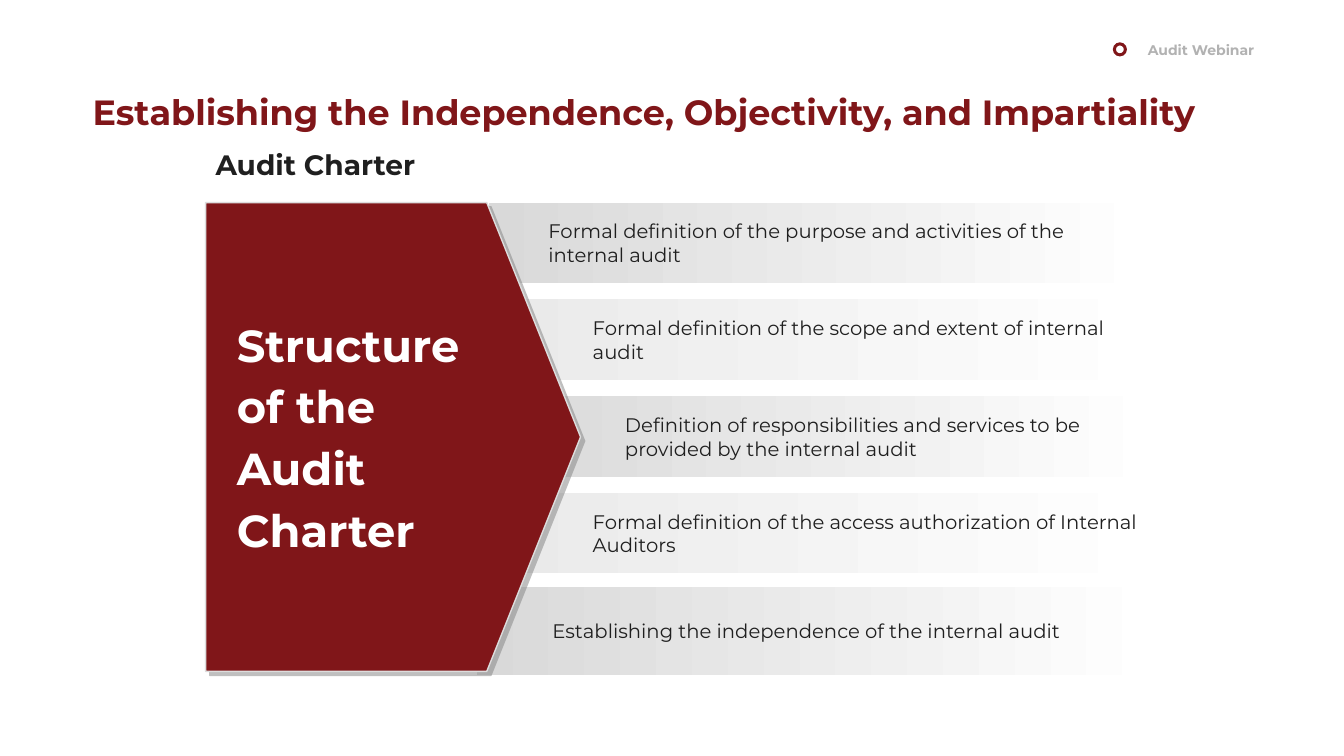
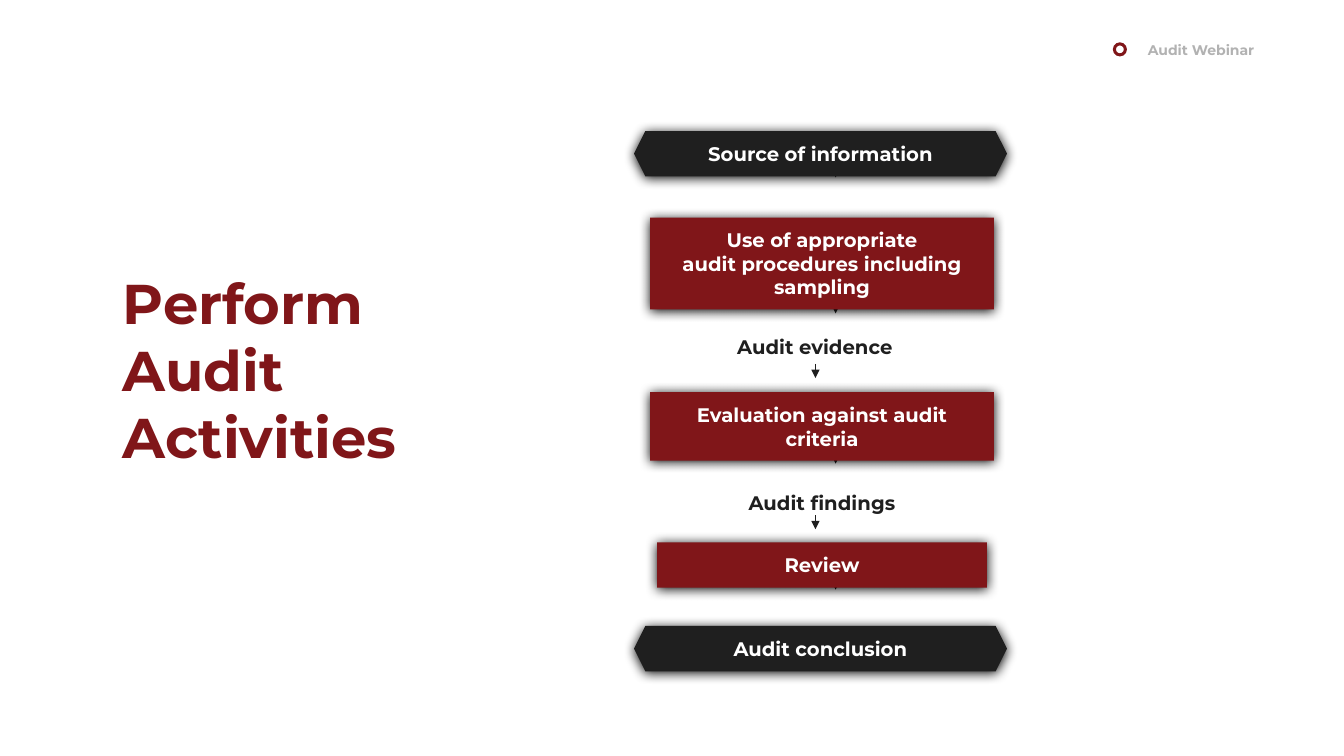
from lxml.etree import SubElement
from pptx import Presentation
from pptx.dml.color import RGBColor
from pptx.enum.shapes import MSO_CONNECTOR as Link, MSO_SHAPE as Form
from pptx.enum.text import MSO_ANCHOR as Anchor, MSO_AUTO_SIZE as Fit, PP_ALIGN as Align
from pptx.oxml.ns import qn
from pptx.util import Inches, Pt

MAROON = RGBColor(0x80, 0x16, 0x19)
INK = RGBColor(0x1F, 0x1F, 0x1F)
WHITE = RGBColor(0xFF, 0xFF, 0xFF)
MUTED = RGBColor(0xB2, 0xB2, 0xB2)
EDGE = RGBColor(0xDD, 0xDD, 0xDD)
SHADE = RGBColor(0x80, 0x80, 0x80)
BLACK = RGBColor(0, 0, 0)
BAR_DARK = RGBColor(0xD9, 0xD9, 0xD9)
BAR_LIGHT = RGBColor(0xEA, 0xEA, 0xEA)

COLUMNS, ROWS = 80, 45
DROP = {"color": SHADE, "alpha": 50, "blur": 0, "distance": 4.2, "angle": 45}
GLOW = {"color": BLACK, "alpha": 100, "blur": 8.5, "distance": 1, "angle": 90}


def apply(target, values):
    for name, value in values.items():
        setattr(target, name, value)


class Deck:
    font = "Montserrat"

    def __init__(self):
        self.deck = Presentation()
        apply(self.deck, {"slide_width": Inches(13.33), "slide_height": Inches(7.5)})
        self.page = None

    def across(self, columns):
        return round(self.deck.slide_width * columns / COLUMNS)

    def down(self, rows):
        return round(self.deck.slide_height * rows / ROWS)

    def place(self, left, top, width, height):
        return self.across(left), self.down(top), self.across(width), self.down(height)

    def start(self):
        self.page = self.deck.slides.add_slide(self.deck.slide_layouts[6])
        self.label((65.64, 2.16, 9.6, 1.62), ["Audit Webinar"], 10, MUTED, align=Align.RIGHT, fit=True)
        self.shape(Form.DONUT, (66.24, 2.52, 0.84, 0.84), MAROON, adjust=0.22)

    def set_text(self, box, lines, size, color, bold=True, align=Align.LEFT,
                 anchor=Anchor.MIDDLE, after=0, inset=None):
        frame = box.text_frame
        apply(frame, {"word_wrap": True, "vertical_anchor": anchor})
        if inset is not None:
            edge = self.across(0.24)
            apply(frame, {"margin_left": self.across(inset), "margin_right": edge,
                          "margin_top": edge, "margin_bottom": edge})
        for number, line in enumerate(lines):
            para = frame.add_paragraph() if number else frame.paragraphs[0]
            apply(para, {"alignment": align, "space_after": Pt(after)})
            span = para.add_run()
            span.text = line
            apply(span.font, {"name": self.font, "size": Pt(size), "bold": bold})
            span.font.color.rgb = color

    def label(self, area, lines, size, color, fit=False, **style):
        box = self.page.shapes.add_textbox(*self.place(*area))
        if fit:
            style["anchor"] = Anchor.TOP
        self.set_text(box, lines, size, color, **style)
        if fit:
            box.text_frame.auto_size = Fit.SHAPE_TO_FIT_TEXT

    def shape(self, form, area, fill, edge=None, shadow=None, adjust=None):
        box = self.page.shapes.add_shape(form, *self.place(*area))
        box.shadow.inherit = False
        box.fill.solid()
        box.fill.fore_color.rgb = fill
        if edge is None:
            box.line.fill.background()
        else:
            box.line.color.rgb = edge
            box.line.width = Pt(1)
        if adjust is not None:
            box.adjustments[0] = adjust
        if shadow:
            self.cast(box, **shadow)
        return box

    def cast(self, box, color, alpha, blur, distance, angle):
        effects = box._element.spPr.find(qn("a:effectLst"))
        outer = SubElement(effects, qn("a:outerShdw"), blurRad=str(Pt(blur)),
                           dist=str(Pt(distance)), dir=str(angle * 60000),
                           algn="ctr", rotWithShape="0")
        tone = SubElement(outer, qn("a:srgbClr"), val=str(color))
        SubElement(tone, qn("a:alpha"), val=str(alpha * 1000))

    def bar(self, area, shade, text, inset):
        box = self.shape(Form.RECTANGLE, area, shade)
        box.fill.gradient()
        box.fill.gradient_angle = 0
        for stop, color in zip(box.fill.gradient_stops, (shade, WHITE)):
            stop.color.rgb = color
        self.set_text(box, [text], 14, INK, bold=False, after=2.5, inset=inset)

    def step(self, form, area, fill, lines):
        box = self.shape(form, area, fill, shadow=GLOW)
        self.set_text(box, lines, 14, WHITE, align=Align.CENTER)

    def arrow(self, column, top, bottom):
        line = self.page.shapes.add_connector(
            Link.STRAIGHT, self.across(column), self.down(top), self.across(column), self.down(bottom))
        line.line.color.rgb = INK
        line.line.width = Pt(0.75)
        look = line._element.spPr
        SubElement(look.find(qn("a:ln")), qn("a:tailEnd"), type="triangle")
        SubElement(look, qn("a:effectLst"))


def charter(deck):
    deck.start()
    bars = [
        (29.1, 39.3, 3.54, "Formal definition of the purpose and activities of the internal audit"),
        (29.64, 39.3, 5.64, "Formal definition of the scope and extent of internal audit"),
        (29.64, 39.3, 7.56, "Definition of responsibilities and services to be provided by the internal audit"),
        (29.64, 39.3, 5.64, "Formal definition of the access authorization of Internal Auditors"),
        (28.38, 40.56, 4.5, "Establishing the independence of the internal audit"),
    ]
    last = len(bars) - 1
    for number, (left, width, inset, text) in enumerate(bars):
        top, height = (34.92, 5.28) if number == last else (12.06 + 5.76 * number, 4.8)
        shade = BAR_LIGHT if number % 2 else BAR_DARK
        deck.bar((left, top, width, height), shade, text, inset)
    plate = deck.shape(Form.PENTAGON, (12.24, 12.06, 22.32, 27.9), MAROON,
                       edge=EDGE, shadow=DROP, adjust=0.25)
    deck.set_text(plate, ["Structure", "of the", "Audit", "Charter"], 32, WHITE, after=5.8, inset=1.86)
    deck.label((12.24, 8.46, 30.9, 2.64), ["Audit Charter"], 20, INK, fit=True)
    deck.label((4.92, 5.1, 67.86, 3.12),
               ["Establishing the Independence, Objectivity, and Impartiality"], 25, MAROON, fit=True)


def activities(deck):
    deck.start()
    for column, top, bottom in [(49.74, 10.44, 10.56), (49.74, 18.48, 18.66), (48.54, 21.66, 22.5),
                                (49.74, 27.42, 27.6), (48.54, 30.66, 31.5), (49.74, 34.92, 35.1)]:
        deck.arrow(column, top, bottom)
    for top, text in [(7.8, "Source of information"), (37.26, "Audit conclusion")]:
        deck.step(Form.HEXAGON, (37.74, top, 22.2, 2.7), INK, [text])
    for left, top, width, height, lines in [
        (38.7, 12.96, 20.46, 5.46, ["Use of appropriate", "audit procedures including sampling"]),
        (38.7, 23.34, 20.46, 4.08, ["Evaluation against audit criteria"]),
        (39.12, 32.28, 19.62, 2.7, ["Review"]),
    ]:
        deck.step(Form.RECTANGLE, (left, top, width, height), MAROON, lines)
    for left, top, text in [(38.7, 20.1, "Audit evidence"), (39.12, 29.4, "Audit findings")]:
        deck.label((left, top, 19.62, 1.08), [text], 14, INK, align=Align.CENTER)
    deck.label((6.72, 15.66, 19.62, 12.72), ["Perform", "Audit", "Activities"], 40, MAROON, fit=True)


def main():
    deck = Deck()
    charter(deck)
    activities(deck)
    deck.deck.save("out.pptx")


if __name__ == "__main__":
    main()
